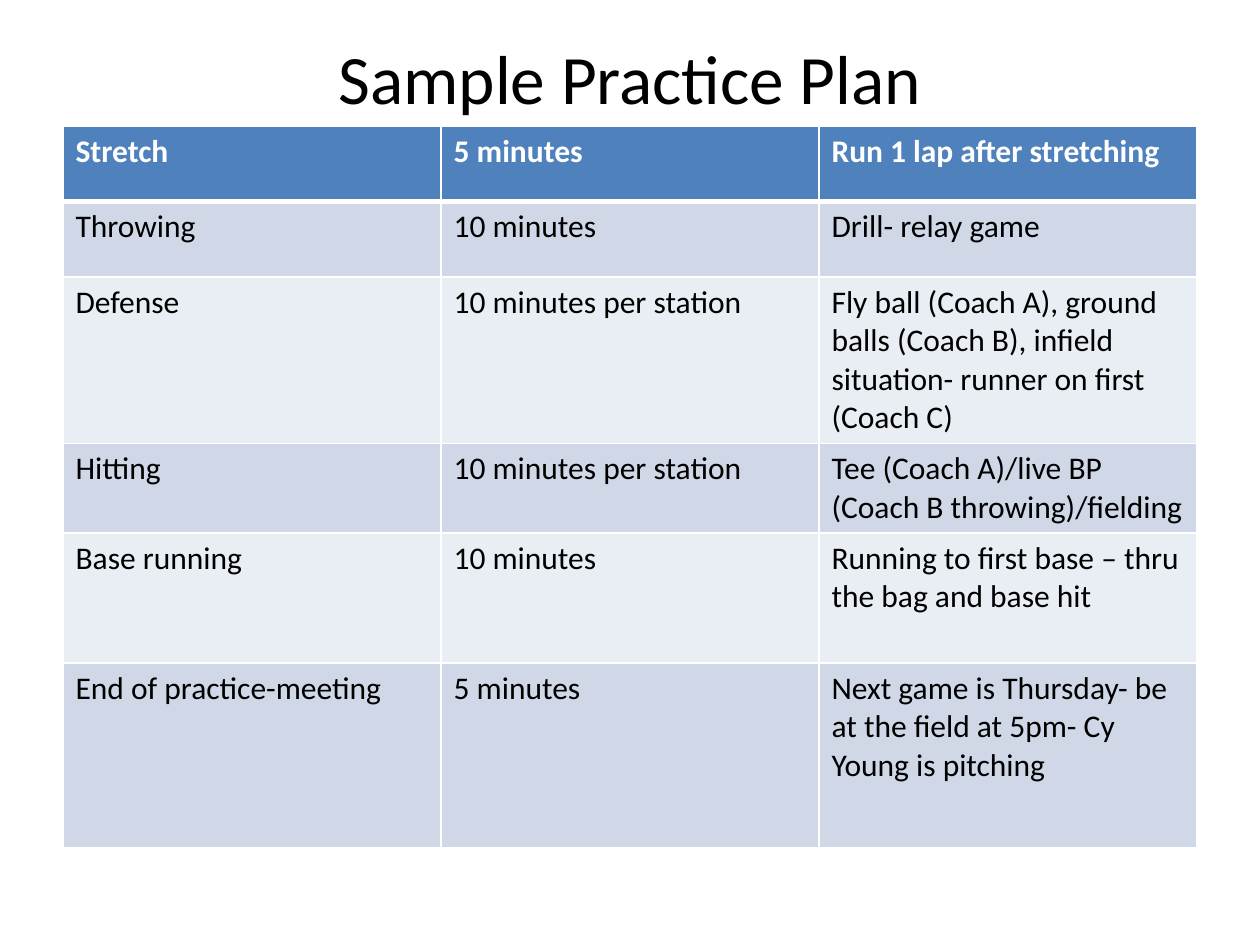
import pptx
import pptx.dml.color
import pptx.enum.text
import pptx.oxml
import pptx.oxml.ns
import pptx.util
from pptx.util import Inches

TITLE = "Sample Practice Plan"
PLAN = [
    ("Stretch", "5 minutes", "Run 1 lap after stretching"),
    ("Throwing", "10 minutes", "Drill- relay game"),
    ("Defense", "10 minutes per station",
     "Fly ball (Coach A), ground balls (Coach B), infield situation- runner on first (Coach C)"),
    ("Hitting", "10 minutes per station",
     "Tee (Coach A)/live BP (Coach B throwing)/fielding"),
    ("Base running", "10 minutes",
     "Running to first base – thru the bag and base hit"),
    ("End of practice-meeting", "5 minutes",
     "Next game is Thursday- be at the field at 5pm- Cy Young is pitching"),
]
ROW_HEIGHTS = [0.6, 0.6, 1.03, 0.6, 1.03, 1.47]
LEFT, WIDTH = 0.5, 9
TITLE_TOP, TITLE_HEIGHT = 0.3, 0.62
TABLE_TOP = 1

THEME = {
    "font": "Calibri",
    "title_size": 39.6,
    "cell_size": 18,
    "text": "000000",
    "header_text": "FFFFFF",
    "header_fill": "4F81BD",
    "bands": ("E9EDF4", "D0D8E8"),
    "border": "FFFFFF",
    "thin": 1,
    "thick": 3,
}


def color(value):
    return pptx.dml.color.RGBColor.from_string(value)


def style_text(frame, size, text_color, bold=False):
    for para in frame.paragraphs:
        for span in para.runs:
            span.font.name = THEME["font"]
            span.font.size = pptx.util.Pt(size)
            span.font.bold = bold
            span.font.color.rgb = color(text_color)


def set_borders(cell, top, bottom):
    properties = cell._tc.get_or_add_tcPr()
    widths = {"L": THEME["thin"], "R": THEME["thin"], "T": top, "B": bottom}
    for side, points in widths.items():
        properties.append(pptx.oxml.parse_xml(
            f'<a:ln{side} {pptx.oxml.ns.nsdecls("a")} w="{pptx.util.Pt(points)}">'
            f'<a:solidFill><a:srgbClr val="{THEME["border"]}"/></a:solidFill>'
            f'</a:ln{side}>'))


def add_title(page):
    title = page.shapes.title
    title.left, title.top = Inches(LEFT), Inches(TITLE_TOP)
    title.width, title.height = Inches(WIDTH), Inches(TITLE_HEIGHT)
    frame = title.text_frame
    frame.text = TITLE
    frame.auto_size = pptx.enum.text.MSO_AUTO_SIZE.NONE
    frame.vertical_anchor = pptx.enum.text.MSO_ANCHOR.MIDDLE
    frame.paragraphs[0].alignment = pptx.enum.text.PP_ALIGN.CENTER
    style_text(frame, THEME["title_size"], THEME["text"])


def add_plan(page):
    columns = len(PLAN[0])
    table = page.shapes.add_table(
        len(PLAN), columns, Inches(LEFT), Inches(TABLE_TOP),
        Inches(WIDTH), Inches(sum(ROW_HEIGHTS))).table
    for column in table.columns:
        column.width = Inches(WIDTH / columns)
    for row, (height, entries) in enumerate(zip(ROW_HEIGHTS, PLAN)):
        table.rows[row].height = Inches(height)
        header = row == 0
        fill = THEME["header_fill"] if header else THEME["bands"][row % 2]
        text_color = THEME["header_text"] if header else THEME["text"]
        top = THEME["thick"] if row == 1 else THEME["thin"]
        bottom = THEME["thick"] if header else THEME["thin"]
        for column, entry in enumerate(entries):
            cell = table.cell(row, column)
            cell.text_frame.text = entry
            style_text(cell.text_frame, THEME["cell_size"], text_color, header)
            set_borders(cell, top, bottom)
            cell.fill.solid()
            cell.fill.fore_color.rgb = color(fill)


def main():
    deck = pptx.Presentation()
    deck.slide_width, deck.slide_height = Inches(10), Inches(7.5)
    page = deck.slides.add_slide(deck.slide_layouts.get_by_name("Title Only"))
    add_title(page)
    add_plan(page)
    deck.save("out.pptx")


if __name__ == "__main__":
    main()
